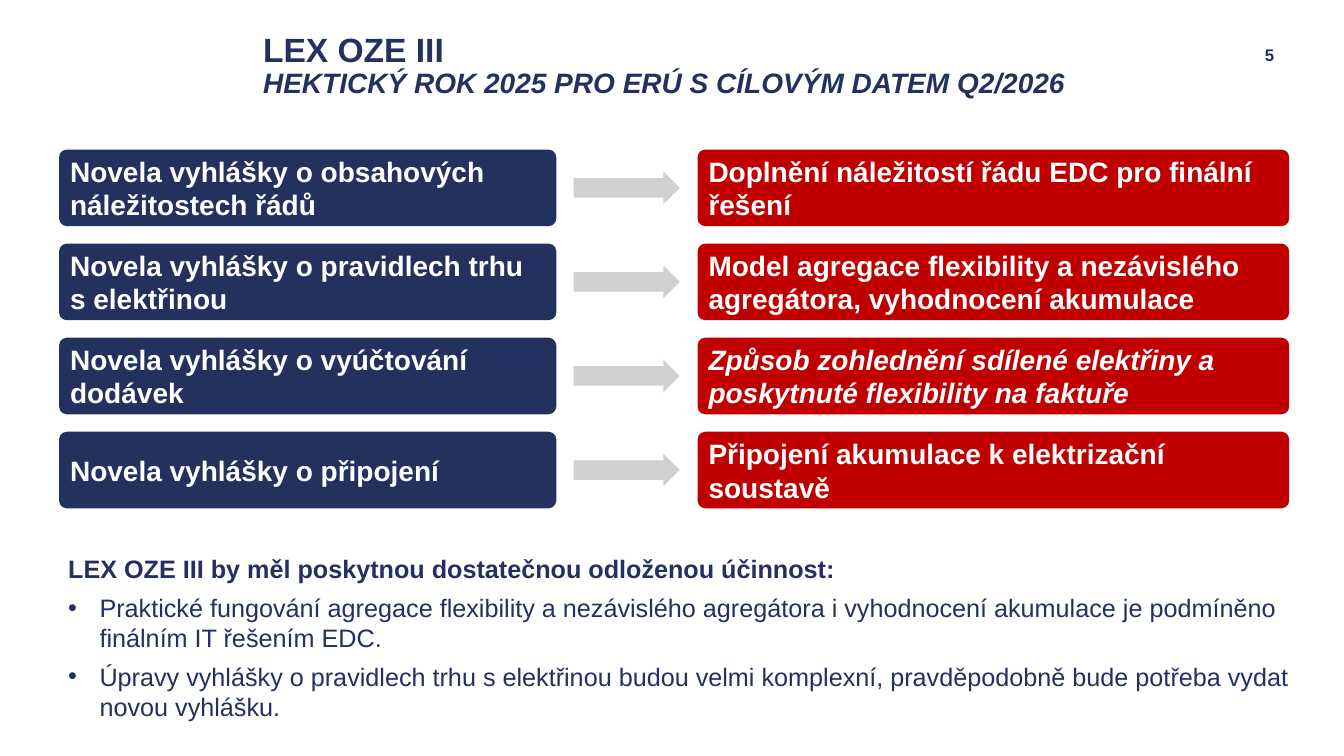
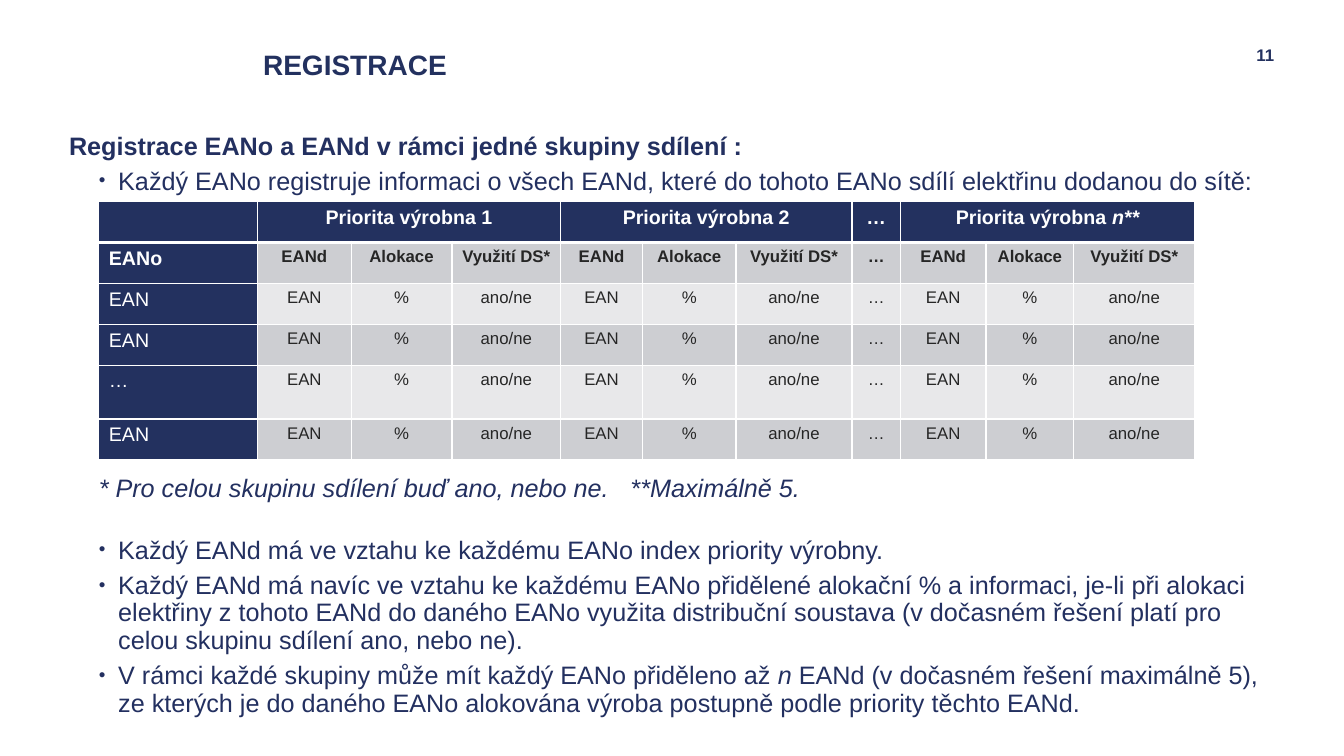
from lxml import etree
from pptx import Presentation
from pptx.dml.color import RGBColor
from pptx.enum import shapes, text
from pptx.oxml import ns
from pptx.util import Cm, Pt

# Shared look
FONT = "Arial"
NAVY, BODY, RED, GREY = "23315F", "233060", "C00000", "D0D0D0"
WHITE, DARK = "FFFFFF", "262626"
BANDS = ("CDCED2", "E8E8EA")
CENTER, RIGHT = text.PP_ALIGN.CENTER, text.PP_ALIGN.RIGHT


def colour(value):
    return RGBColor.from_string(value)


def paint(part, value):
    part.fill.solid()
    part.fill.fore_color.rgb = colour(value)


def child(parent, tag, **attributes):
    return etree.SubElement(parent, ns.qn(tag), attributes)


def write(paragraph, content, size, hue, bold=False, italic=False, align=None,
          spacing=None, before=0, after=0, indent=0, bullet=None, tab=None):
    """Fill a paragraph; parts between | marks are italic, bullet is its size in %."""
    properties = paragraph._p.get_or_add_pPr()
    if indent or bullet:
        hanging = 0.79 if bullet == 100 else 0.49
        properties.set("marL", str(Cm(indent)))
        properties.set("indent", str(-Cm(hanging) if bullet else 0))
    if bullet:
        child(properties, "a:buSzPct", val=str(bullet * 1000))
        child(properties, "a:buFont", typeface=FONT)
        child(properties, "a:buChar", char="•")
    if tab:
        stops = child(properties, "a:tabLst")
        child(stops, "a:tab", pos=str(Cm(tab)), algn="l")
    paragraph.alignment = align
    paragraph.line_spacing = spacing
    paragraph.space_before, paragraph.space_after = Pt(before), Pt(after)
    font = paragraph.font
    font.name, font.size, font.bold, font.italic = FONT, Pt(size), bold, italic
    font.color.rgb = colour(hue)
    for position, piece in enumerate(content.split("|")):
        if piece:
            run = paragraph.add_run()
            run.text = piece
            if position % 2:
                run.font.italic = True


def set_margins(frame, horizontal, vertical):
    frame.margin_left = frame.margin_right = Cm(horizontal)
    frame.margin_top = frame.margin_bottom = Cm(vertical)


def add_text(slide, box, paragraphs, margins=(0, 0), anchor=text.MSO_ANCHOR.TOP):
    """Add a text box; paragraphs are (content, style) pairs."""
    frame = slide.shapes.add_textbox(*map(Cm, box)).text_frame
    frame.word_wrap = True
    frame.vertical_anchor = anchor
    set_margins(frame, *margins)
    for position, (content, style) in enumerate(paragraphs):
        paragraph = frame.add_paragraph() if position else frame.paragraphs[0]
        write(paragraph, content, **style)


def add_page(deck, number, *title):
    """Add a slide with its number and title lines."""
    slide = deck.slides.add_slide(deck.slide_layouts[6])
    add_text(slide, (28.93, 0.99, 3.43, 0.76),
             [(number, dict(size=12, hue=NAVY, bold=True, align=RIGHT))], (0.25, 0.13))
    add_text(slide, (6.63, 0.18, 24.89, 3),
             [(line, dict(style, hue=NAVY, bold=True, spacing=0.9)) for line, style in title],
             anchor=text.MSO_ANCHOR.MIDDLE)
    return slide


def add_block(slide, kind, box, fill, adjustments):
    block = slide.shapes.add_shape(kind, *map(Cm, box))
    block.shadow.inherit = False
    block.line.fill.background()
    paint(block, fill)
    for position, value in enumerate(adjustments):
        block.adjustments[position] = value
    return block


def add_card(slide, box, fill, content, italic=False):
    card = add_block(slide, shapes.MSO_SHAPE.ROUNDED_RECTANGLE, box, fill, [0.1])
    frame = card.text_frame
    frame.word_wrap = True
    frame.vertical_anchor = text.MSO_ANCHOR.MIDDLE
    set_margins(frame, 0.22, 0.1)
    write(frame.paragraphs[0], content, 20, WHITE, bold=True, italic=italic,
          align=text.PP_ALIGN.LEFT)


def style_cell(cell, fill, top, bottom):
    """White borders, then the fill."""
    properties = cell._tc.get_or_add_tcPr()
    for side, width in (("L", 1), ("R", 1), ("T", top), ("B", bottom)):
        border = child(properties, "a:ln" + side, w=str(Pt(width)))
        child(child(border, "a:solidFill"), "a:srgbClr", val=WHITE)
    paint(cell, fill)


# Slide: decrees and their effects
def build_decrees(deck):
    slide = add_page(deck, "5", ("LEX OZE III", dict(size=24)),
                     ("HEKTICKÝ ROK 2025 PRO ERÚ S CÍLOVÝM DATEM Q2/2026",
                      dict(size=20, italic=True)))
    decrees = [
        ("Novela vyhlášky o obsahových náležitostech řádů",
         "Doplnění náležitostí řádu EDC pro finální řešení", False),
        ("Novela vyhlášky o pravidlech trhu s\u00a0elektřinou",
         "Model agregace flexibility a nezávislého agregátora, vyhodnocení akumulace", False),
        ("Novela vyhlášky o vyúčtování dodávek",
         "Způsob zohlednění sdílené elektřiny a poskytnuté flexibility na faktuře", True),
        ("Novela vyhlášky o připojení",
         "Připojení akumulace k elektrizační soustavě", False),
    ]
    height, arrow_height = 1.93, 0.82
    for row, (decree, effect, italic) in enumerate(decrees):
        top = 3.77 + row * 2.37
        add_card(slide, (1.49, top, 12.53, height), NAVY, decree)
        add_block(slide, shapes.MSO_SHAPE.RIGHT_ARROW,
                  (14.46, top + (height - arrow_height) / 2, 2.67, arrow_height),
                  GREY, [0.6, 0.5])
        add_card(slide, (17.58, top, 14.91, height), RED, effect, italic)

    note = dict(size=18, hue=BODY, after=6)
    item = dict(note, indent=0.79, bullet=100)
    add_text(slide, (1.47, 13.82, 32.38, 4.52), [
        ("LEX OZE III by měl poskytnou dostatečnou odloženou účinnost:", dict(note, bold=True)),
        ("Praktické fungování agregace flexibility a nezávislého agregátora i vyhodnocení "
         "akumulace je podmíněno finálním IT řešením EDC.", item),
        ("Úpravy vyhlášky o pravidlech trhu s elektřinou budou velmi komplexní, "
         "pravděpodobně bude potřeba vydat novou vyhlášku.", item),
    ], (0.25, 0.13))


# Slide: registration table
def add_priorities(slide):
    widths = [4, 2.36, 2.54, 2.74, 2.06, 2.36, 2.92, 1.22, 2.16, 2.21, 3.05]
    heights = [1.03, 1.03, 1.03, 1.03, 1.36, 1.03]

    def spread(group):
        return [*group, *group, "…", *group]

    headings = {1: "Priorita výrobna 1", 4: "Priorita výrobna 2", 7: "…",
                8: "Priorita výrobna |n**|"}
    values = spread(["EAN", "%", "ano/ne"])
    rows = [[headings.get(column, "") for column in range(len(widths))],
            ["EANo", *spread(["EANd", "Alokace", "Využití DS*"])]]
    rows += [[label, *values] for label in ("EAN", "EAN", "…", "EAN")]

    table = slide.shapes.add_table(len(rows), len(widths), Cm(2.49), Cm(5.08),
                                   Cm(sum(widths)), Cm(sum(heights))).table
    table.first_row = table.horz_banding = False
    for column, width in zip(table.columns, widths):
        column.width = Cm(width)
    for row, height in zip(table.rows, heights):
        row.height = Cm(height)
    for r, row in enumerate(rows):
        for c, content in enumerate(row):
            cell = table.cell(r, c)
            heading = r == 0 or c == 0
            style_cell(cell, NAVY if heading else BANDS[(r - 1) % 2],
                       3 if r == 1 else 1, 3 if r == 0 else 1)
            if c:
                cell.margin_left = cell.margin_right = Cm(0.1)
            if content:
                write(cell.text_frame.paragraphs[0], content, 14 if heading else 12,
                      WHITE if heading else DARK, bold=r < 2, align=CENTER if c else None)
    for first in (1, 4, 8):
        table.cell(0, first).merge(table.cell(0, first + 2))


def build_registration(deck):
    slide = add_page(deck, "11", ("REGISTRACE", dict(size=20)))
    note = dict(size=18, hue=BODY, spacing=0.9)
    item = dict(note, indent=1.49, bullet=75)
    left, width = 1.49, 30.86
    add_text(slide, (left, 3.38, width, 1.6), [
        ("Registrace EANo a EANd v rámci jedné skupiny sdílení :",
         dict(note, bold=True, indent=0.25)),
        ("Každý EANo registruje informaci o všech EANd, které do tohoto EANo sdílí "
         "elektřinu dodanou do sítě:", dict(item, before=5)),
    ])
    add_priorities(slide)
    add_text(slide, (2.49, 11.98, 29.86, 0.8), [
        ("* Pro celou skupinu sdílení buď ano, nebo ne.\t**Maximálně 5.",
         dict(note, italic=True, tab=13.4))])
    rule = dict(item, after=6)
    add_text(slide, (left, 13.54, width, 4.77), [
        ("Každý EANd má ve vztahu ke každému EANo index priority výrobny.", rule),
        ("Každý EANd má navíc ve vztahu ke každému EANo přidělené alokační % a informaci, "
         "je-li při alokaci elektřiny z tohoto EANd do daného EANo využita distribuční "
         "soustava (v dočasném řešení platí pro celou skupinu sdílení ano, nebo ne).", rule),
        ("V rámci každé skupiny může mít každý EANo přiděleno až |n |EANd (v dočasném řešení "
         "maximálně 5), ze kterých je do daného EANo alokována výroba postupně podle "
         "priority těchto EANd.", rule),
    ])


def main():
    deck = Presentation()
    deck.slide_width, deck.slide_height = Cm(33.87), Cm(19.05)
    build_decrees(deck)
    build_registration(deck)
    deck.save("out.pptx")


if __name__ == "__main__":
    main()
